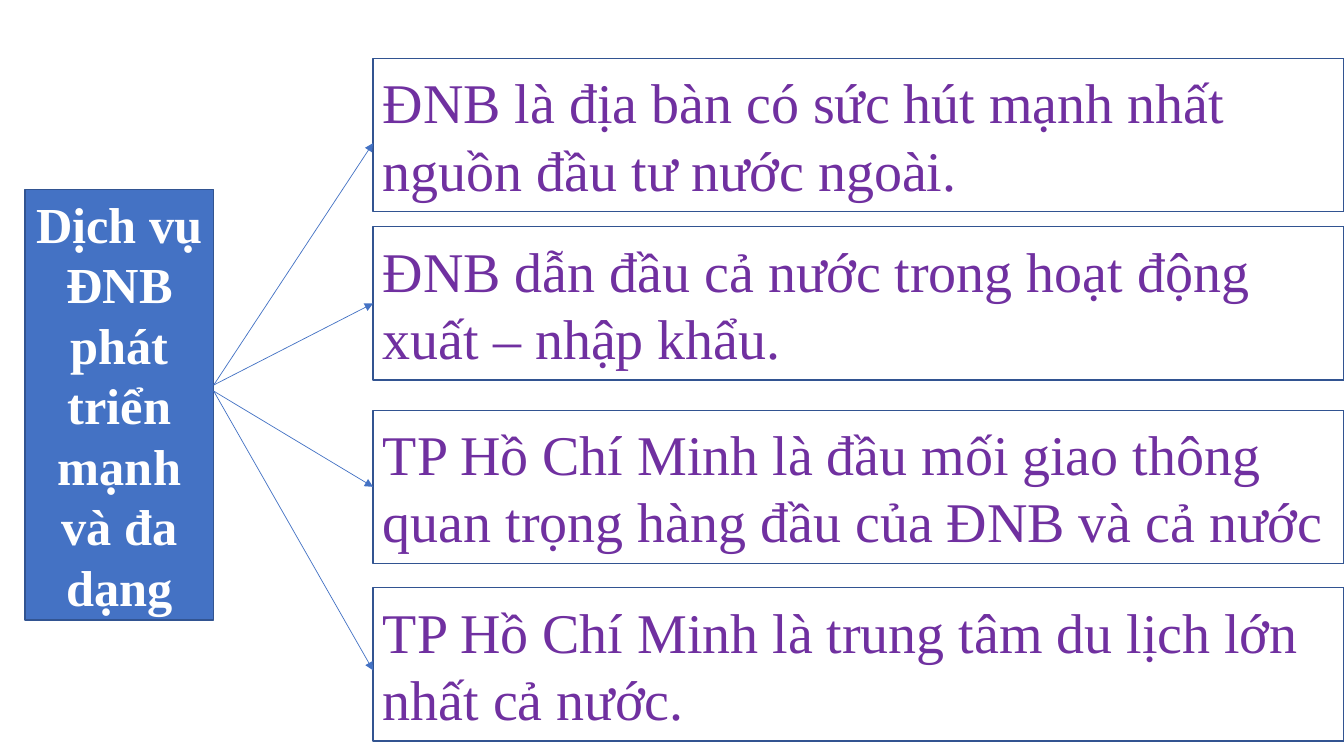
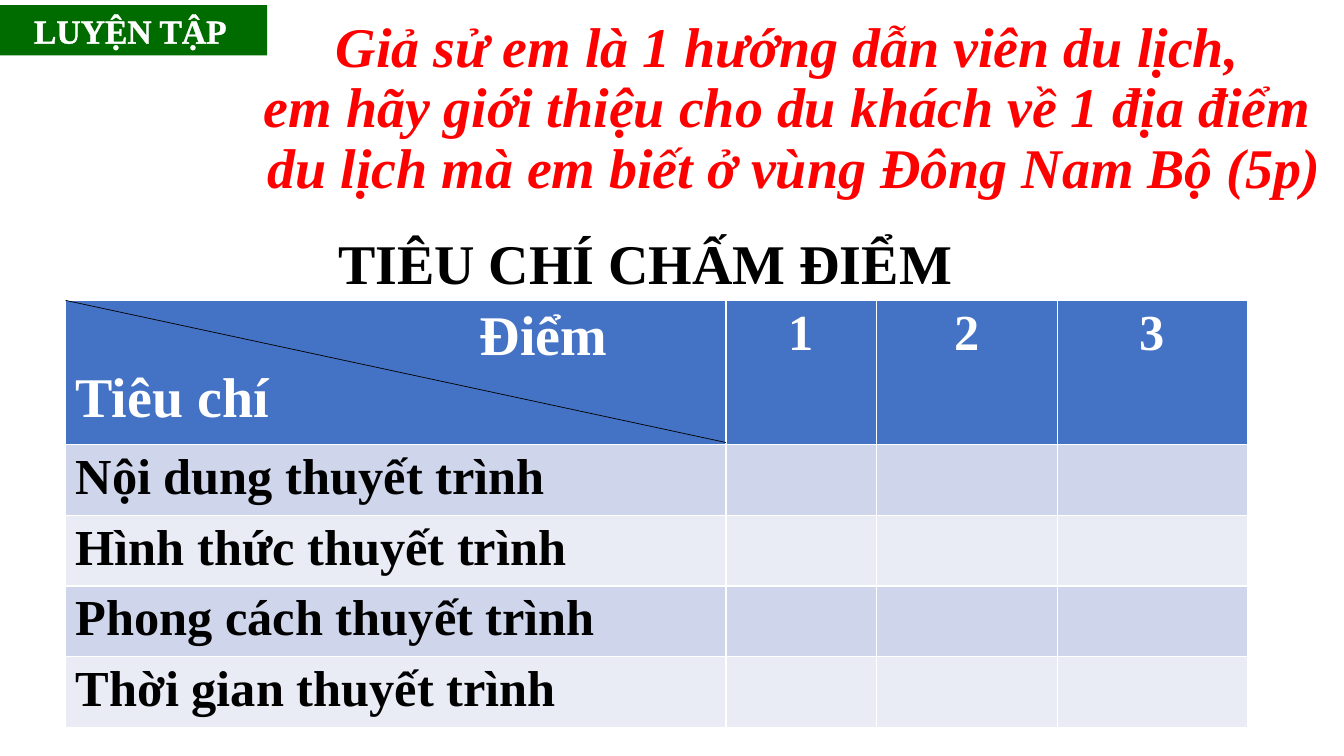
from dataclasses import dataclass

from lxml import etree
from pptx import Presentation
from pptx import util as u
from pptx.dml.color import RGBColor
from pptx.enum import shapes, text
from pptx.oxml import ns


@dataclass(frozen=True)
class Theme:
    font: str = "Times New Roman"
    blue: str = "4472C4"
    dark_blue: str = "325491"
    purple: str = "7030A0"
    red: str = "FF0000"
    green: str = "006C00"
    white: str = "FFFFFF"
    black: str = "000000"
    bands: tuple = ("CFD5EA", "E9EBF5")
    large: int = 40
    medium: int = 36
    small: int = 24


THEME = Theme()
CENTER = text.PP_ALIGN.CENTER
LEFT = text.PP_ALIGN.LEFT


def write(frame, content, size, color, align=LEFT, bold=True, italic=False, spacing=None):
    """Fill a text frame, one paragraph per line of content, and format it."""
    frame.text = content
    frame.word_wrap = True
    for paragraph in frame.paragraphs:
        paragraph.alignment = align
        paragraph.line_spacing = spacing
        for run in paragraph.runs:
            run.font.name = THEME.font
            run.font.size = u.Pt(size)
            run.font.bold = bold
            run.font.italic = italic
            run.font.color.rgb = RGBColor.from_string(color)


def draw(slide, kind, position, fill=None, line=None, width=1):
    """Add a rectangle (left, top, width, height) or a line (x1, y1, x2, y2) without shadow."""
    lengths = [u.Inches(value) for value in position]
    if kind == "rectangle":
        shape = slide.shapes.add_shape(shapes.MSO_SHAPE.RECTANGLE, *lengths)
        shape.shadow.inherit = False
        shape.fill.solid()
        shape.fill.fore_color.rgb = RGBColor.from_string(fill)
    else:
        shape = slide.shapes.add_connector(shapes.MSO_CONNECTOR.STRAIGHT, *lengths)
        etree.SubElement(shape.line._get_or_add_ln().getparent(), ns.qn("a:effectLst"))
    if line:
        shape.line.color.rgb = RGBColor.from_string(line)
        shape.line.width = u.Pt(width)
    else:
        shape.line.fill.background()
    return shape


presentation = Presentation()
presentation.slide_width = u.Inches(13.33)
presentation.slide_height = u.Inches(7.5)
blank = presentation.slide_layouts[6]

# Slide 1: one topic leading to four statements
slide = presentation.slides.add_slide(blank)
topic = draw(slide, "rectangle", (0.25, 1.88, 1.87, 4.27), THEME.blue, THEME.dark_blue)
write(topic.text_frame, "Dịch vụ ĐNB phát triển mạnh và đa dạng", THEME.medium, THEME.white, CENTER)

topic_right, box_left, box_height = 2.12, 3.7, 1.52
# top of the box, start and end heights of its arrow, statement
statements = [
    (0.58, 3.82, 1.42, "ĐNB là địa bàn có sức hút mạnh nhất nguồn đầu tư nước ngoài."),
    (2.25, 3.82, 3.01, "ĐNB dẫn đầu cả nước trong hoạt động xuất – nhập khẩu."),
    (4.07, 3.88, 4.83, "TP Hồ Chí Minh là đầu mối giao thông quan trọng hàng đầu của ĐNB và cả nước"),
    (5.83, 3.88, 6.65, "TP Hồ Chí Minh là trung tâm du lịch lớn nhất cả nước."),
]
boxes = []
for top, _, _, statement in statements:
    box = draw(slide, "rectangle", (box_left, top, 9.63, box_height), THEME.white, THEME.dark_blue)
    write(box.text_frame, statement, THEME.large, THEME.purple, bold=False)
    boxes.append(box)
for box, (top, start, end, _) in zip(boxes, statements):
    arrow = draw(slide, "line", (topic_right, start, box_left, end), line=THEME.blue, width=0.5)
    if abs(top + box_height / 2 - end) < 0.01:
        arrow.end_connect(box, 1)
    etree.SubElement(arrow.line._get_or_add_ln(), ns.qn("a:tailEnd"), type="triangle")

# Slide 2: practice task and scoring table
slide = presentation.slides.add_slide(blank)
task = slide.shapes.add_textbox(u.Inches(2.42), u.Inches(0.14), u.Inches(10.91), u.Inches(1.97))
write(
    task.text_frame,
    "Giả sử em là 1 hướng dẫn viên du lịch, \n"
    "em hãy giới thiệu cho du khách về 1 địa điểm \n"
    "du lịch mà em biết ở vùng Đông Nam Bộ (5p)",
    THEME.large, THEME.red, CENTER, italic=True, spacing=0.9,
)

label = draw(slide, "rectangle", (0, 0.05, 2.65, 0.5), THEME.green)
write(label.text_frame, "LUYỆN TẬP ", THEME.small, THEME.white, CENTER)
label.text_frame.auto_size = text.MSO_AUTO_SIZE.SHAPE_TO_FIT_TEXT
outline = etree.Element(ns.qn("a:ln"), w=str(u.Pt(0.75)))
outline_fill = etree.SubElement(outline, ns.qn("a:solidFill"))
etree.SubElement(outline_fill, ns.qn("a:srgbClr"), val=THEME.white)
label.text_frame.paragraphs[0].runs[0]._r.get_or_add_rPr().insert(0, outline)

column_widths = [6.55, 1.49, 1.8, 1.88]
row_heights = [1.41] + [0.7] * 4
table_left, table_top = 0.65, 2.98
rows = [["Điểm\nTiêu chí", "1", "2", "3"]] + [
    [criterion, "", "", ""]
    for criterion in (
        "Nội dung thuyết trình",
        "Hình thức thuyết trình",
        "Phong cách thuyết trình",
        "Thời gian thuyết trình",
    )
]
table = slide.shapes.add_table(
    len(rows), len(column_widths), u.Inches(table_left), u.Inches(table_top),
    u.Inches(sum(column_widths)), u.Inches(sum(row_heights)),
).table
for column, width in zip(table.columns, column_widths):
    column.width = u.Inches(width)
for row_index, values in enumerate(rows):
    table.rows[row_index].height = u.Inches(row_heights[row_index])
    is_header = row_index == 0
    fill = THEME.blue if is_header else THEME.bands[(row_index - 1) % 2]
    color = THEME.white if is_header else THEME.black
    for column_index, value in enumerate(values):
        cell = table.cell(row_index, column_index)
        cell.fill.solid()
        cell.fill.fore_color.rgb = RGBColor.from_string(fill)
        size = THEME.large if is_header and column_index == 0 else THEME.medium
        write(cell.text_frame, value, size, color, CENTER if column_index else LEFT)
score_heading = table.cell(0, 0).text_frame.paragraphs[0]
score_heading._p.get_or_add_pPr().set("marL", str(u.Inches(4.01)))

heading = slide.shapes.add_textbox(u.Inches(0.65), u.Inches(2.29), u.Inches(11.5), u.Inches(1.38))
write(heading.text_frame, "TIÊU CHÍ CHẤM ĐIỂM", THEME.large, THEME.black, CENTER, spacing=0.9)
diagonal = (table_left, table_top, table_left + column_widths[0], table_top + row_heights[0])
draw(slide, "line", diagonal, line=THEME.black, width=0.5)

presentation.save("out.pptx")
